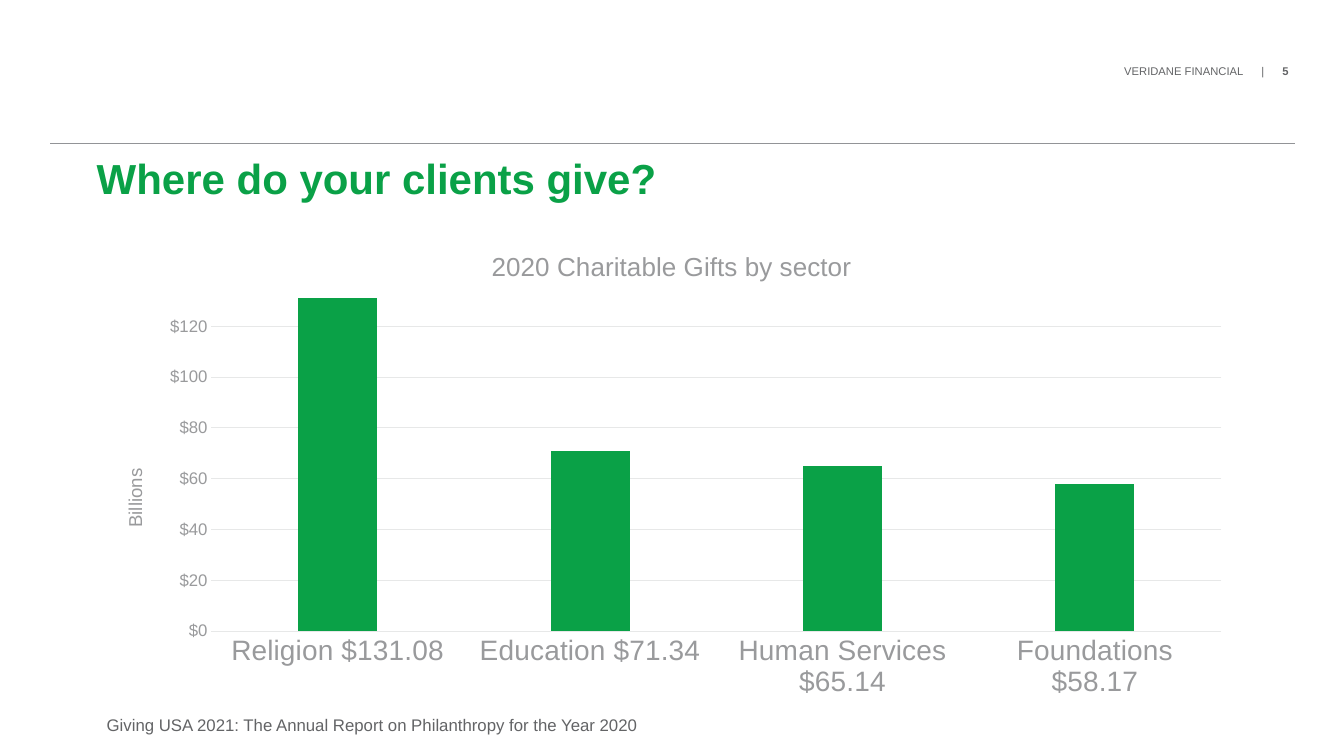
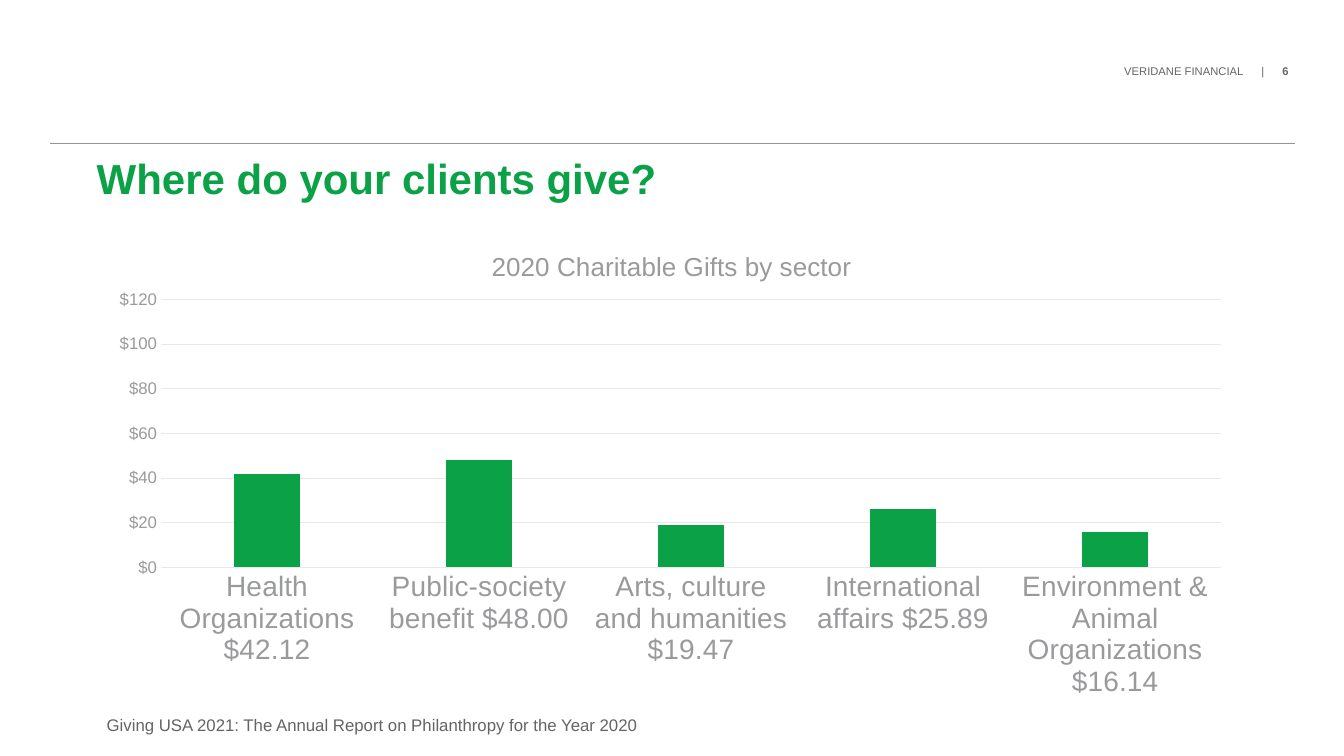
from lxml import etree
from pptx import Presentation
from pptx.chart.data import CategoryChartData
from pptx.dml.color import RGBColor
from pptx.enum import chart as ch, shapes
from pptx.oxml import ns
from pptx.util import Inches, Pt

GREEN = RGBColor(0x0A, 0xA1, 0x47)
DARK_GRAY = RGBColor(0x63, 0x64, 0x66)
RULE_GRAY = RGBColor(0x92, 0x94, 0x97)
LABEL_GRAY = RGBColor(0x99, 0x9A, 0x9C)
GRID_GRAY = RGBColor(0xE7, 0xE8, 0xE8)
FONT = "Arial"
LEFT = Inches(0.96)

SECTOR_SLIDES = [
    dict(
        number="5", axis_max=135, axis_title="Billions",
        plot=dict(x=0.1, y=0.14, w=0.88, h=0.7),
        gifts={
            "Religion $131.08": 131,
            "Education $71.34": 71,
            "Human Services $65.14": 65,
            "Foundations $58.17": 58,
        },
    ),
    dict(
        number="6", axis_max=125, axis_title=None,
        plot=dict(x=0.056, y=0.14, w=0.924, h=0.57),
        gifts={
            "Health Organizations $42.12": 42,
            "Public-society benefit $48.00": 48,
            "Arts, culture and humanities $19.47": 19,
            "International affairs $25.89": 26,
            "Environment & Animal Organizations $16.14": 16,
        },
    ),
]


def style(font, size, color, bold=False):
    font.name, font.size, font.bold = FONT, Pt(size), bold
    font.color.rgb = color


def place(part, **fractions):
    """Fix a chart part at fractions of the chart's width and height."""
    for old in part.findall(ns.qn("c:layout")):
        part.remove(old)
    after_text = 1 if part.find(ns.qn("c:tx")) is not None else 0
    layout = etree.Element(ns.qn("c:layout"))
    part.insert(after_text, layout)
    manual = etree.SubElement(layout, ns.qn("c:manualLayout"))
    if "w" in fractions:
        etree.SubElement(manual, ns.qn("c:layoutTarget"), val="inner")
    for side in "xy":
        etree.SubElement(manual, ns.qn(f"c:{side}Mode"), val="edge")
    for key, value in fractions.items():
        etree.SubElement(manual, ns.qn(f"c:{key}"), val=str(value))


prs = Presentation()
prs.slide_width, prs.slide_height = Inches(13.33), Inches(7.5)

for sector in SECTOR_SLIDES:
    slide = prs.slides.add_slide(prs.slide_layouts[6])

    # Header, rule, title and source
    boxes = []
    for left, top, width, height, inset in (
        (Inches(11.15), 0.64, 1.7, 0.15, 0),
        (LEFT, 1.58, 11.67, 0.5, 0),
        (LEFT, 7.04, 7.17, 0.3, 0.1),
    ):
        frame = slide.shapes.add_textbox(
            left, Inches(top), Inches(width), Inches(height)).text_frame
        frame.word_wrap = True
        frame.margin_left = frame.margin_right = Inches(inset)
        frame.margin_top = frame.margin_bottom = Inches(inset / 2)
        boxes.append(frame.paragraphs[0])
    header, title, source = boxes

    tabs = etree.SubElement(header._p.get_or_add_pPr(), ns.qn("a:tabLst"))
    for position in (1.36, 1.57):
        etree.SubElement(tabs, ns.qn("a:tab"), pos=str(Inches(position)), algn="l")
    style(header.font, 8, DARK_GRAY)
    header.add_run().text = "VERIDANE FINANCIAL\t|\t"
    page_number = header.add_run()
    page_number.text = sector["number"]
    page_number.font.bold = True

    title.text = "Where do your clients give?"
    title.line_spacing = Pt(31)
    style(title.font, 30, GREEN, bold=True)

    source.text = "Giving USA 2021: The Annual Report on Philanthropy for the Year 2020"
    style(source.font, 12, DARK_GRAY)

    rule = slide.shapes.add_connector(
        shapes.MSO_CONNECTOR.STRAIGHT,
        Inches(0.5), Inches(1.42), Inches(12.84), Inches(1.42))
    rule.line.color.rgb = RULE_GRAY
    rule.line.width = Pt(0.5)
    etree.SubElement(rule._element.spPr, ns.qn("a:effectLst"))

    # Gifts by sector
    data = CategoryChartData(number_format="General")
    data.categories = list(sector["gifts"])
    data.add_series("Series 1", list(sector["gifts"].values()))
    chart = slide.shapes.add_chart(
        ch.XL_CHART_TYPE.COLUMN_CLUSTERED,
        LEFT, Inches(2.18), Inches(11.38), Inches(4.86), data).chart
    style(chart.font, 10, DARK_GRAY)
    chart.has_legend = False

    chart.has_title = True
    heading = chart.chart_title.text_frame
    heading.text = "2020 Charitable Gifts by sector"
    style(heading.paragraphs[0].font, 18.6, LABEL_GRAY)
    place(chart.chart_title._element, x=0.34, y=0.05)

    columns = chart.plots[0]
    columns.gap_width, columns.overlap = 219, -27
    columns.vary_by_categories = False
    fill = columns.series[0].format.fill
    fill.solid()
    fill.fore_color.rgb = GREEN

    categories, dollars = chart.category_axis, chart.value_axis
    for axis, size in ((categories, 20), (dollars, 12)):
        style(axis.tick_labels.font, size, LABEL_GRAY)
        axis.major_tick_mark = axis.minor_tick_mark = ch.XL_TICK_MARK.NONE
    for line in (categories.format.line, dollars.major_gridlines.format.line):
        line.color.rgb = GRID_GRAY
        line.width = Pt(0.75)
    dollars.format.line.fill.background()
    dollars.minimum_scale, dollars.maximum_scale = 0, sector["axis_max"]
    dollars.major_unit = 20
    dollars.tick_labels.number_format = '"$"#,##0'
    dollars.tick_labels.number_format_is_linked = False
    if sector["axis_title"]:
        unit = dollars.axis_title.text_frame
        unit.text = sector["axis_title"]
        style(unit.paragraphs[0].font, 13.3, LABEL_GRAY)
        place(dollars.axis_title._element, x=0.02, y=0.5)

    place(chart._chartSpace.chart.plotArea, **sector["plot"])

prs.save("out.pptx")
